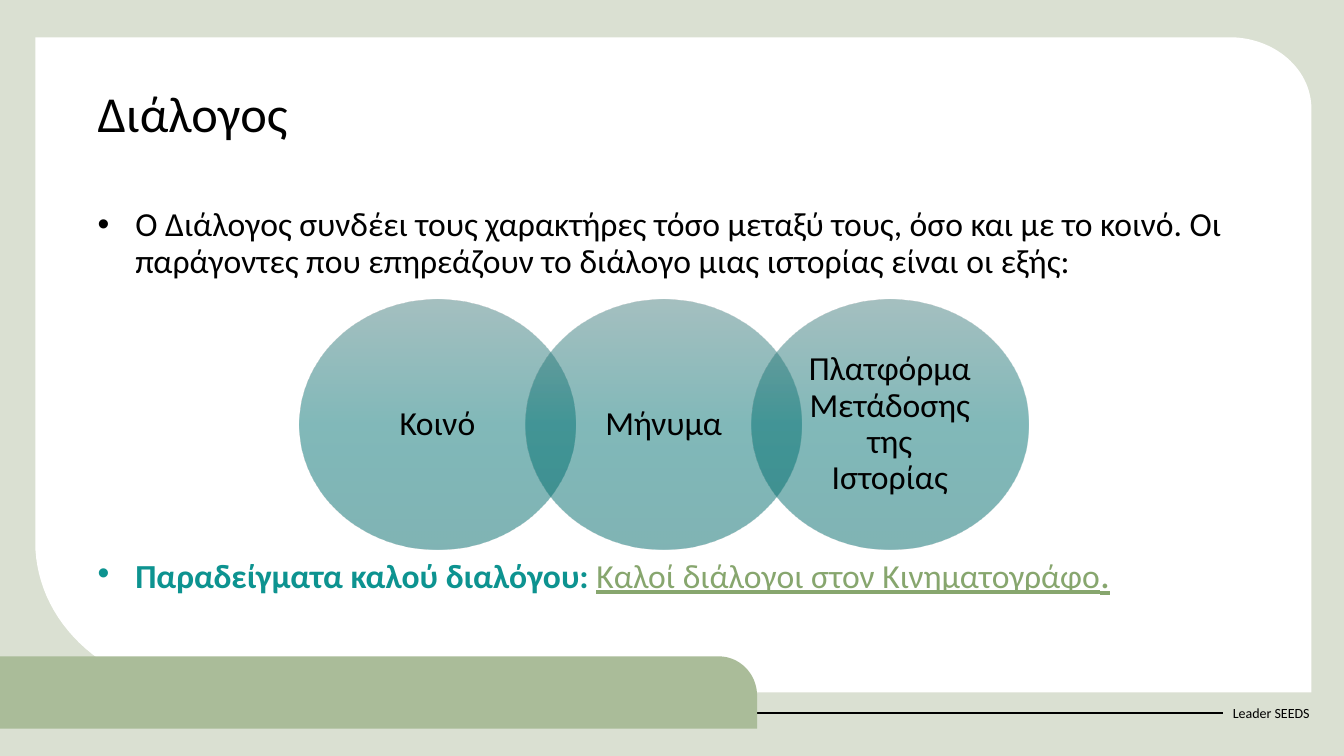
from math import cos, radians, sin

from lxml import etree
from pptx import Presentation
from pptx.dml.color import RGBColor
from pptx.enum.shapes import MSO_CONNECTOR, MSO_SHAPE
from pptx.enum.text import MSO_ANCHOR, PP_ALIGN
from pptx.oxml.ns import qn
from pptx.util import Cm, Pt

MIDDLE, TOP = MSO_ANCHOR.MIDDLE, MSO_ANCHOR.TOP
CENTER, LEFT = PP_ALIGN.CENTER, PP_ALIGN.LEFT
FONT = "Calibri"
COLORS = {
    "black": "000000", "white": "FFFFFF", "sage": "DAE0D2", "bar": "AABC99",
    "teal": "0D9390", "link": "87A66E",
}

# Runs: text, size, colour, bold, underline
TITLE = [("Διάλογος", 36, "black", False, False)]
INTRO = [("Ο Διάλογος συνδέει τους χαρακτήρες τόσο μεταξύ τους, όσο και με το κοινό. "
          "Οι παράγοντες που επηρεάζουν το διάλογο μιας ιστορίας είναι οι εξής:",
          24, "black", False, False)]
EXAMPLES = [
    ("Παραδείγματα καλού διαλόγου: ", 24, "teal", True, False),
    ("Καλοί διάλογοι στον Κινηματογράφο", 24, "link", False, True),
    (".", 28, "link", False, True),
]
FOOTER = [("Leader SEEDS", 10, "black", False, False)]
FACTORS = ["Κοινό", "Μήνυμα", "Πλατφόρμα Μετάδοσης της Ιστορίας"]

# Lengths in cm
SLIDE_W, SLIDE_H = 33.87, 19.05
PANEL = (0.89, 0.94, 33.05, 17.45)  # left, top, right, bottom
BAR = (0, 16.54, 19.08, 18.36)
TEXT_LEFT, TEXT_W = 2.21, 29.44
CIRCLE_LEFT, CIRCLE_TOP, CIRCLE_W, CIRCLE_H, CIRCLE_STEP = 7.54, 7.54, 6.97, 6.31, 5.7
GRADIENT = [(0, "4B8081"), (50, "037273"), (100, "006869")]  # percent, colour
OPACITY = 50
RULE_Y, RULE_END = 17.96, 30.82


def rgb(name):
    return RGBColor.from_string(COLORS[name])


def corner(cx, cy, rx, ry, start):
    """Points of a clockwise quarter ellipse that starts at the given angle."""
    angles = [radians(start + 3 * i) for i in range(31)]
    return [(cx + rx * cos(a), cy + ry * sin(a)) for a in angles]


def paint(sp, color):
    sp.shadow.inherit = False
    sp.fill.solid()
    sp.fill.fore_color.rgb = rgb(color)
    sp.line.fill.background()


def outline(s, points, color):
    pts = [(Cm(x), Cm(y)) for x, y in points]
    builder = s.shapes.build_freeform(*pts[0])
    builder.add_line_segments(pts[1:], close=True)
    paint(builder.convert_to_shape(), color)


def write(sp, runs, anchor=TOP, align=LEFT, spacing=0.9, bullet=False):
    tf = sp.text_frame
    tf.word_wrap = True
    tf.vertical_anchor = anchor
    p = tf.paragraphs[0]
    p.alignment = align
    p.line_spacing = spacing
    if bullet:
        pPr = p._p.get_or_add_pPr()
        pPr.set("marL", str(Cm(0.95)))
        pPr.set("indent", str(-Cm(0.95)))
        etree.SubElement(pPr, qn("a:buFont")).set("typeface", "Arial")
        etree.SubElement(pPr, qn("a:buChar")).set("char", "•")
    for text, size, color, bold, underline in runs:
        r = p.add_run()
        r.text = text
        r.font.name, r.font.size = FONT, Pt(size)
        r.font.bold, r.font.underline = bold, underline
        r.font.color.rgb = rgb(color)


def text_box(s, left, top, width, height, runs, **style):
    sp = s.shapes.add_textbox(Cm(left), Cm(top), Cm(width), Cm(height))
    write(sp, runs, **style)


def glaze(sp):
    """Fill with the translucent top-to-bottom gradient."""
    sp.fill.gradient()
    grad = sp._element.spPr.find(qn("a:gradFill"))
    stops = grad.find(qn("a:gsLst"))
    for old in list(stops):
        stops.remove(old)
    for percent, color in GRADIENT:
        stop = etree.SubElement(stops, qn("a:gs"), pos=str(percent * 1000))
        clr = etree.SubElement(stop, qn("a:srgbClr"), val=color)
        etree.SubElement(clr, qn("a:alpha"), val=str(OPACITY * 1000))
    grad.find(qn("a:lin")).set("ang", str(90 * 60000))


def add_background(s):
    paint(s.shapes.add_shape(MSO_SHAPE.RECTANGLE, 0, 0, Cm(SLIDE_W), Cm(SLIDE_H)), "sage")
    left, top, right, bottom = PANEL
    outline(s, [(left, top), *corner(right - 2.06, top + 1.8, 2.06, 1.8, 270),
                (right, bottom), *corner(left + 4.32, bottom - 3.78, 4.32, 3.78, 90)],
            "white")
    text_box(s, RULE_END, 17.45, 2.57, 1.02, FOOTER, anchor=MIDDLE, spacing=1.0)
    rule = s.shapes.add_connector(MSO_CONNECTOR.STRAIGHT, 0, Cm(RULE_Y),
                                  Cm(RULE_END), Cm(RULE_Y))
    rule.line.color.rgb = rgb("black")
    rule.line.width = Pt(1.5)
    etree.SubElement(rule._element.spPr, qn("a:effectLst"))
    left, top, right, bottom = BAR
    outline(s, [(left, bottom), (left, top),
                *corner(right - 0.97, top + 0.99, 0.97, 0.99, 270), (right, bottom)], "bar")


def add_factors(s):
    for i, factor in enumerate(FACTORS):
        sp = s.shapes.add_shape(MSO_SHAPE.OVAL, Cm(CIRCLE_LEFT + i * CIRCLE_STEP),
                                Cm(CIRCLE_TOP), Cm(CIRCLE_W), Cm(CIRCLE_H))
        sp.shadow.inherit = False
        sp.line.fill.background()
        glaze(sp)
        tf = sp.text_frame
        tf.margin_left = tf.margin_right = Cm(0.36)
        tf.margin_top = tf.margin_bottom = Cm(0.08)
        write(sp, [(factor, 24, "black", False, False)], anchor=MIDDLE, align=CENTER)


def main():
    prs = Presentation()
    prs.slide_width, prs.slide_height = Cm(SLIDE_W), Cm(SLIDE_H)
    s = prs.slides.add_slide(prs.slide_layouts[6])
    add_background(s)
    text_box(s, TEXT_LEFT, 2.11, TEXT_W, 2.24, TITLE)
    text_box(s, TEXT_LEFT, 5.11, TEXT_W, 2.2, INTRO, bullet=True)
    text_box(s, TEXT_LEFT, 13.64, TEXT_W, 1.6, EXAMPLES, spacing=1.07, bullet=True)
    add_factors(s)
    prs.save("out.pptx")


if __name__ == "__main__":
    main()
